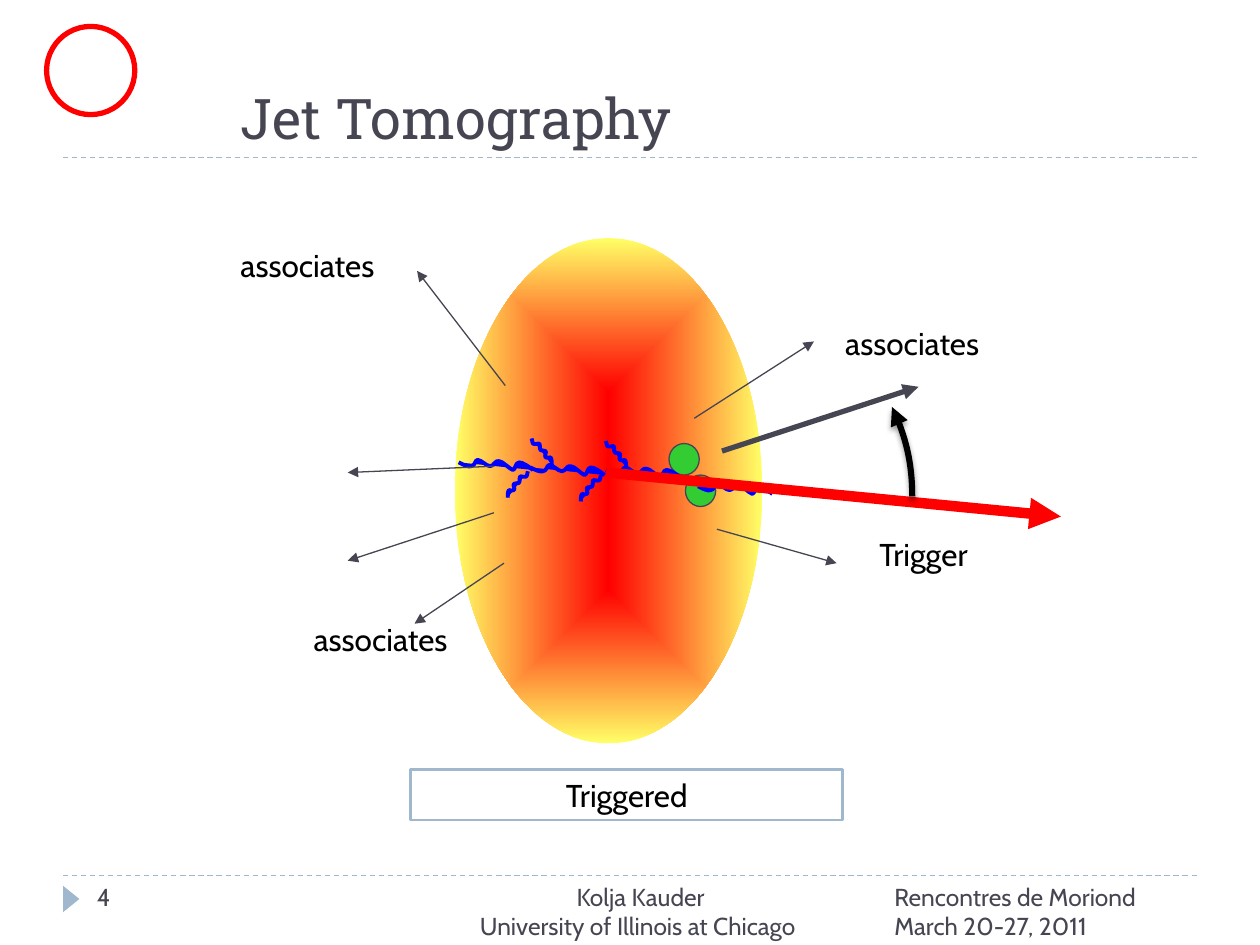
from lxml import etree
from pptx import Presentation
from pptx import util as u
from pptx.dml.color import RGBColor
from pptx.enum import dml, shapes, text
from pptx.oxml.ns import qn

INK, STEEL, RED, BLUE, GREEN = "464653", "9FB8CD", "FF0000", "0000FF", "33CC33"
BLACK, WHITE, YELLOW = "000000", "FFFFFF", "FFFF66"

# Bezier points of one gluon wave, relative to its start
LONG_WAVE = [
    (0, 0), (.04, .02), (.08, .04), (.10, .03), (.13, .03), (.13, -.02), (.15, -.02),
    (.18, -.02), (.22, .03), (.25, .03), (.28, .03), (.29, -.02), (.32, -.01),
    (.35, -.01), (.40, .05), (.43, .06), (.45, .06), (.45, 0), (.48, 0),
    (.51, 0), (.55, .03), (.59, .06)]
SHORT_WAVE = [
    (0, 0), (0, .02), (.01, .03), (.01, .04), (.02, .05), (.05, .04), (.06, .04),
    (.07, .05), (.06, .08), (.07, .09), (.07, .10), (.10, .09), (.11, .10),
    (.12, .11), (.10, .14), (.11, .15), (.12, .16), (.14, .15), (.15, .15),
    (.16, .16), (.16, .19), (.16, .21)]


def rgb(color):
    return RGBColor.from_string(color)


def box(*lengths):
    return [u.Inches(length) for length in lengths]


def style_outline(line, color, width):
    line.color.rgb = rgb(color)
    line.width = u.Pt(width)


def style_text(frame, wording, size, color=BLACK, font="Cabin",
               align=text.PP_ALIGN.LEFT):
    frame.text = wording
    frame.word_wrap = True
    paragraph = frame.paragraphs[0]
    paragraph.alignment = align
    for run in paragraph.runs:
        run.font.size = u.Pt(size)
        run.font.name = font
        run.font.color.rgb = rgb(color)


def add_label(slide, wording, left, top, width, size=18, color=BLACK,
              align=text.PP_ALIGN.LEFT):
    label = slide.shapes.add_textbox(*box(left, top, width, 0.4))
    style_text(label.text_frame, wording, size, color, align=align)


def add_figure(slide, preset, bounds, fill=None, outline=None, width=0.75):
    figure = slide.shapes.add_shape(preset, *box(*bounds))
    figure.shadow.inherit = False
    if fill:
        figure.fill.solid()
        figure.fill.fore_color.rgb = rgb(fill)
    else:
        figure.fill.background()
    if outline:
        style_outline(figure.line, outline, width)
    else:
        figure.line.fill.background()
    return figure


def add_line(slide, start, end, color, width=0.75):
    line = slide.shapes.add_connector(shapes.MSO_CONNECTOR.STRAIGHT,
                                      *box(*start, *end))
    style_outline(line.line, color, width)
    etree.SubElement(line._element.spPr, qn("a:effectLst"))
    return line


def add_arrowhead(shape, end):
    """Put a triangle on the "headEnd" (start) or "tailEnd" (finish) of a line."""
    outline = shape.line._get_or_add_ln()
    etree.SubElement(outline, qn("a:" + end), type="triangle")


def add_arrow(slide, start, end, color=INK, width=0.75):
    add_arrowhead(add_line(slide, start, end, color, width), "tailEnd")


def bend_segments(outline):
    """Turn each three straight segments into one cubic Bezier curve."""
    segments = list(outline.iter(qn("a:lnTo")))
    for first in range(0, len(segments), 3):
        curve = etree.Element(qn("a:cubicBezTo"))
        segments[first].addprevious(curve)
        for segment in segments[first:first + 3]:
            curve.append(segment[0])
            segment.getparent().remove(segment)


def add_gluon(slide, wave, start, direction=1):
    x, y = start
    points = [box(x + direction * dx, y + dy) for dx, dy in wave]
    builder = slide.shapes.build_freeform(*points[0])
    builder.add_line_segments(points[1:], close=False)
    gluon = builder.convert_to_shape()
    bend_segments(gluon._element.spPr)
    gluon.shadow.inherit = False
    gluon.fill.solid()
    gluon.fill.fore_color.rgb = rgb(BLUE)
    style_outline(gluon.line, BLUE, 2.25)


def add_medium(slide):
    """Hot ellipse, shaded from its centre outwards."""
    medium = add_figure(slide, shapes.MSO_SHAPE.OVAL, (3.61, 1.89, 2.44, 4.01))
    medium.fill.gradient()
    for stop, color in zip(medium.fill.gradient_stops, (RED, YELLOW)):
        stop.color.rgb = rgb(color)
    gradient = medium._element.spPr.find(qn("a:gradFill"))
    gradient.remove(gradient.find(qn("a:lin")))
    shading = etree.SubElement(gradient, qn("a:path"))
    shading.set("path", "shape")
    etree.SubElement(shading, qn("a:fillToRect"),
                     {side: "50000" for side in "ltrb"})


def add_rotation_arc(slide):
    arc = add_figure(slide, shapes.MSO_SHAPE.ARC, (5.26, 2.64, 1.98, 2.6),
                     outline=BLACK, width=3.5)
    arc.adjustments[0] = 191.667
    arc.adjustments[1] = 0
    add_arrowhead(arc, "headEnd")
    shadow = etree.SubElement(
        arc._element.spPr.find(qn("a:effectLst")), qn("a:outerShdw"),
        blurRad=str(u.Pt(3)), dist=str(u.Pt(2)), dir="5400000", rotWithShape="0")
    tone = etree.SubElement(shadow, qn("a:srgbClr"), val=BLACK)
    etree.SubElement(tone, qn("a:alpha"), val="40000")


def add_frame(slide):
    """Title, rules, emblem and footer."""
    for y in (6.95, 1.25):
        rule = add_line(slide, (0.5, y), (9.5, y), STEEL)
        rule.line.dash_style = dml.MSO_LINE.DASH
    add_figure(slide, shapes.MSO_SHAPE.OVAL, (0.37, 0.21, 0.7, 0.7), WHITE, RED, 3)
    marker = add_figure(slide, shapes.MSO_SHAPE.ISOSCELES_TRIANGLE,
                        (0.46, 7.07, 0.21, 0.13), STEEL)
    marker.rotation = 90

    title = slide.shapes.title
    title.left, title.top, title.width, title.height = box(1.81, 0.25, 7.69, 1)
    style_text(title.text_frame, "Jet Tomography", 32, INK, "Roboto Slab")
    title.text_frame.vertical_anchor = text.MSO_ANCHOR.BOTTOM

    add_label(slide, "Rencontres de Moriond March 20-27, 2011", 7, 6.95, 2.5, 14, INK)
    add_label(slide, "4", 0.67, 6.95, 2.17, 14, INK)
    add_label(slide, "Kolja Kauder\vUniversity of Illinois at Chicago ",
              3.17, 6.95, 3.83, 14, INK, text.PP_ALIGN.CENTER)


def add_collision(slide):
    add_medium(slide)
    for left, top in ((5.31, 3.52), (5.44, 3.77)):
        add_figure(slide, shapes.MSO_SHAPE.OVAL, (left, top, 0.24, 0.25), GREEN, INK)
    for start in ((5.54, 3.86), (4.81, 3.73), (4.21, 3.71), (3.64, 3.67)):
        add_gluon(slide, LONG_WAVE, start)
    for start in ((4.81, 3.5), (4.22, 3.48)):
        add_gluon(slide, SHORT_WAVE, start)
    for start in ((4.77, 3.77), (4.19, 3.74)):
        add_gluon(slide, SHORT_WAVE, start, direction=-1)

    add_arrow(slide, (4.81, 3.75), (8.42, 4.1), RED, 6)
    add_arrow(slide, (5.73, 3.58), (7.29, 3.07), width=3)
    for start, end in (((4.01, 3.06), (3.31, 2.15)), ((4, 4.47), (3.29, 4.95)),
                       ((5.69, 4.2), (6.64, 4.47)), ((3.92, 3.7), (2.76, 3.75)),
                       ((3.92, 4.07), (2.76, 4.45)), ((5.51, 3.32), (6.46, 2.71))):
        add_arrow(slide, start, end)
    add_rotation_arc(slide)

    add_label(slide, "Trigger", 6.88, 4.2, 2.21)
    for left, top in ((2.39, 4.87), (1.81, 1.9), (6.61, 2.52)):
        add_label(slide, "associates", left, top, 2.15)


def main():
    deck = Presentation()
    deck.slide_width, deck.slide_height = box(10, 7.5)
    slide = deck.slides.add_slide(deck.slide_layouts[5])
    add_frame(slide)
    add_collision(slide)
    caption = add_figure(slide, shapes.MSO_SHAPE.RECTANGLE, (3.26, 6.11, 3.43, 0.4),
                         WHITE, STEEL, 1.5)
    style_text(caption.text_frame, "Triggered", 18, align=text.PP_ALIGN.CENTER)
    deck.save("out.pptx")


if __name__ == "__main__":
    main()
